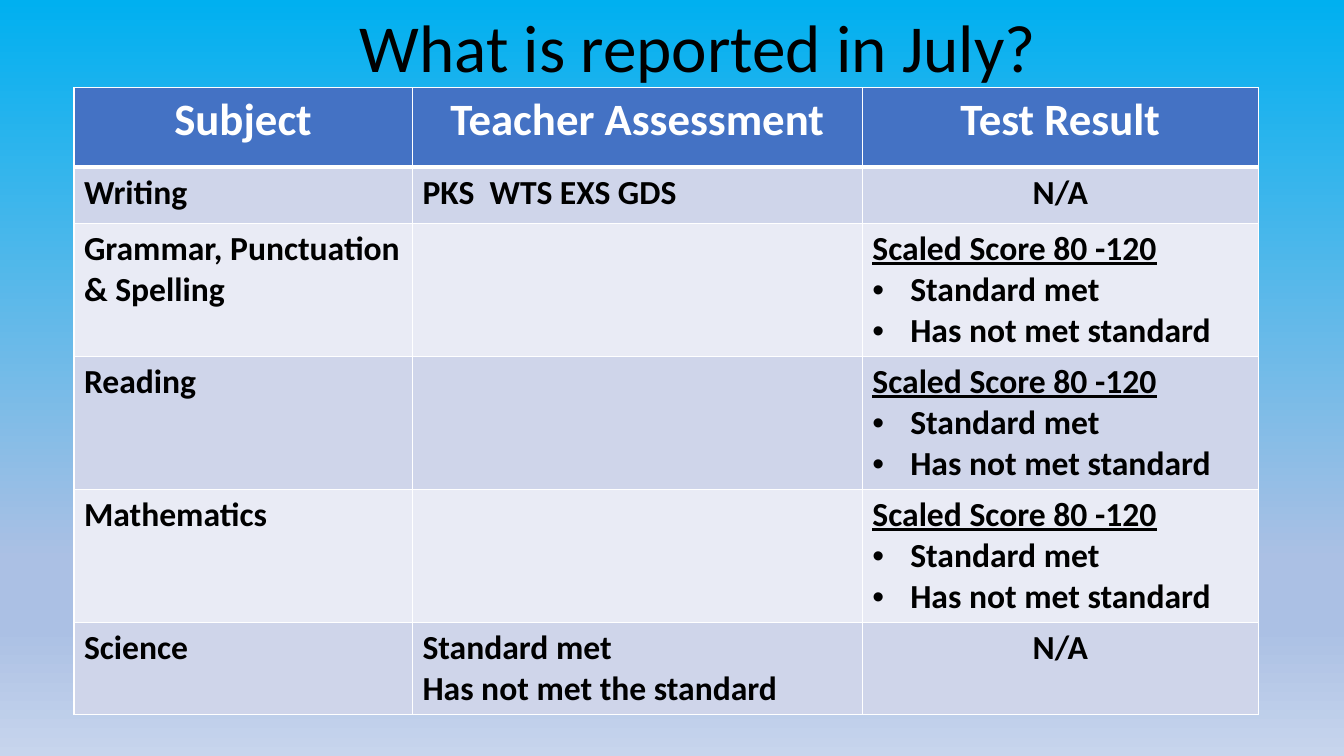
from copy import deepcopy

from lxml.etree import SubElement
from pptx import Presentation
from pptx.dml.color import RGBColor
from pptx.enum.text import MSO_ANCHOR, PP_ALIGN
from pptx.oxml.ns import qn
from pptx.util import Pt

FONT = "Calibri"
COLORS = {
    "text": "000000", "white": "FFFFFF", "header": "4472C4",
    "band_dark": "CFD5EA", "band_light": "E9EBF5",
    "sky": "00B0F0", "haze": "ABC0E4", "pale": "C7D5ED",
}
BACKGROUND = [(0, "sky"), (0.74, "haze"), (0.83, "haze"), (1, "pale")]
TITLE = "What is reported in July?"
SCORE = "Scaled Score 80 -120"
SCORE_LINES = [SCORE, "• Standard met", "• Has not met standard"]
ROWS = [
    (["Subject"], ["Teacher Assessment"], ["Test Result"]),
    (["Writing"], ["PKS  WTS EXS GDS"], ["N/A"]),
    (["Grammar, Punctuation & Spelling"], [], SCORE_LINES),
    (["Reading"], [], SCORE_LINES),
    (["Mathematics"], [], SCORE_LINES),
    (["Science"], ["Standard met", "Has not met the standard"], ["N/A"]),
]
COL_WIDTHS = [241.8, 321.4, 282.8]
ROW_HEIGHTS = [56.6, 40, 93.6, 93.6, 93.6, 65]
TABLE_LEFT, TABLE_TOP = 52.8, 62.8
INDENT = 27


def rgb(name):
    return RGBColor.from_string(COLORS[name])


def add_run(p, text, size, color, bold=False):
    r = p.add_run()
    r.text = text
    r.font.name, r.font.size, r.font.bold = FONT, Pt(size), bold
    r.font.color.rgb = rgb(color)
    return r


def add_bullet(p):
    pPr = p._p.get_or_add_pPr()
    pPr.set("marL", str(Pt(INDENT)))
    pPr.set("indent", str(-Pt(INDENT)))
    SubElement(pPr, qn("a:buFont"), typeface="Arial")
    SubElement(pPr, qn("a:buChar"), char="•")


def set_borders(cell, widths):
    tcPr = cell._tc.get_or_add_tcPr()
    for i, (side, width) in enumerate(widths.items()):
        ln = SubElement(tcPr, qn(f"a:ln{side}"), w=str(Pt(width)))
        fill = SubElement(ln, qn("a:solidFill"))
        SubElement(fill, qn("a:srgbClr"), val=COLORS["white"])
        tcPr.insert(i, ln)


def fill_cell(cell, lines, row):
    header = row == 0
    cell.fill.solid()
    cell.fill.fore_color.rgb = rgb(
        "header" if header else "band_dark" if row % 2 else "band_light")
    set_borders(cell, {"L": 1, "R": 1, "T": 3 if row == 1 else 1,
                       "B": 3 if header else 1})
    tf = cell.text_frame
    for i, line in enumerate(lines):
        p = tf.add_paragraph() if i else tf.paragraphs[0]
        if header or line == "N/A":
            p.alignment = PP_ALIGN.CENTER
        if line.startswith("• "):
            add_bullet(p)
        r = add_run(p, line.removeprefix("• "), 32 if header else 24,
                    "white" if header else "text", True)
        if line == SCORE:
            r.font.underline = True


def set_background(s):
    fill = s.background.fill
    fill.gradient()
    fill.gradient_angle = 270
    gs_list = next(s.element.iter(qn("a:gsLst")))
    while len(gs_list) < len(BACKGROUND):
        gs_list.append(deepcopy(gs_list[0]))
    for stop, (position, color) in zip(fill.gradient_stops, BACKGROUND):
        stop.position = position
        stop.color.rgb = rgb(color)


def add_title(s):
    sp = s.shapes.title
    sp.left, sp.top, sp.width, sp.height = Pt(80), Pt(0), Pt(837.4), Pt(167)
    tf = sp.text_frame
    tf.word_wrap = True
    tf.vertical_anchor = MSO_ANCHOR.TOP
    p = tf.paragraphs[0]
    p.alignment = PP_ALIGN.CENTER
    add_run(p, TITLE, 48, "text")


def add_report_table(s):
    table = s.shapes.add_table(
        len(ROWS), len(COL_WIDTHS), Pt(TABLE_LEFT), Pt(TABLE_TOP),
        Pt(sum(COL_WIDTHS)), Pt(sum(ROW_HEIGHTS))).table
    for col, width in zip(table.columns, COL_WIDTHS):
        col.width = Pt(width)
    for i, (height, cells) in enumerate(zip(ROW_HEIGHTS, ROWS)):
        table.rows[i].height = Pt(height)
        for j, lines in enumerate(cells):
            fill_cell(table.cell(i, j), lines, i)


def main():
    prs = Presentation()
    prs.slide_width, prs.slide_height = Pt(960), Pt(540)
    s = prs.slides.add_slide(prs.slide_layouts[5])
    set_background(s)
    add_title(s)
    add_report_table(s)
    prs.save("out.pptx")


if __name__ == "__main__":
    main()
